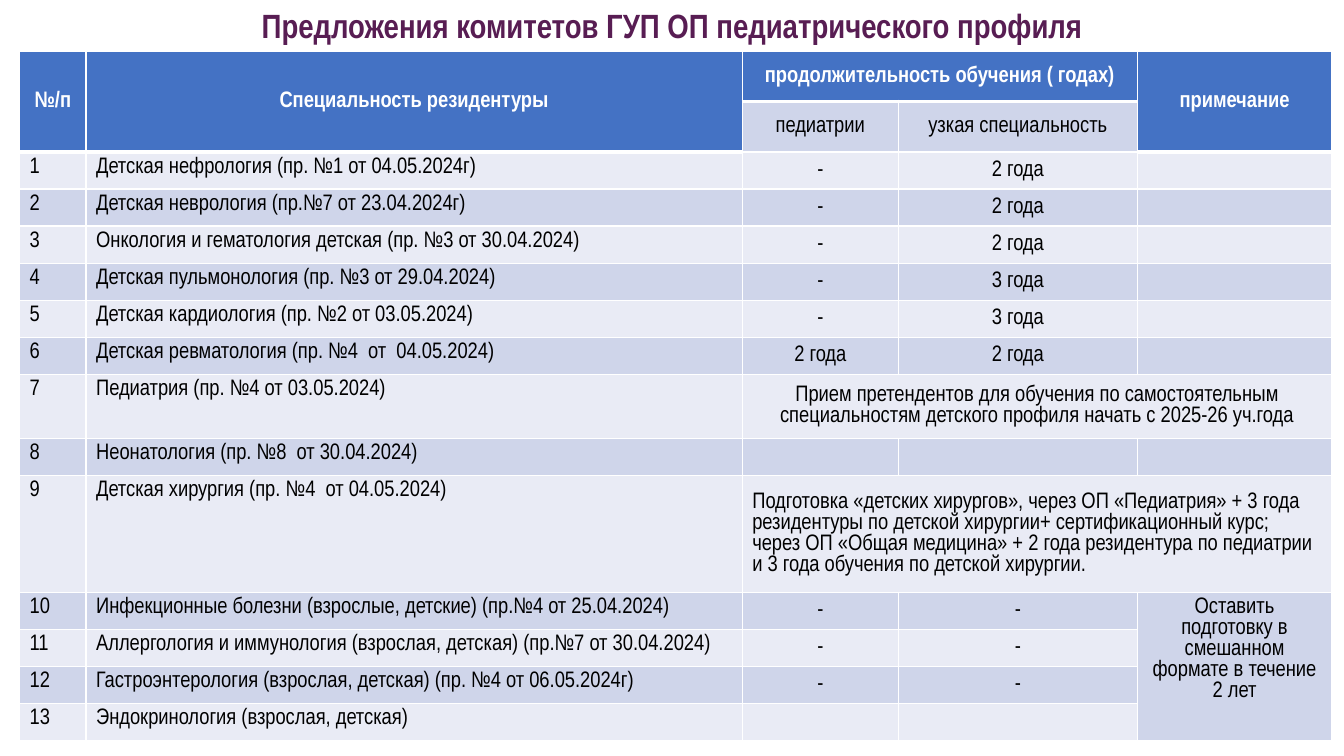
from lxml import etree
from pptx import Presentation
from pptx.dml.color import RGBColor
from pptx.enum import text
from pptx.oxml import ns
from pptx.util import Pt

FONT = "Arial Narrow"
BLUE, BAND_DARK, BAND_LIGHT, WHITE = "4472C4", "CFD5EA", "E9EBF5", "FFFFFF"
COLUMN_WIDTHS = [47.5, 468.7, 111.6, 170.6, 139]
HEADER_HEIGHT, ROW_HEIGHT = 36, 26.5
TALL_ROWS = {8: 45.7, 10: 83.6}
MERGES = [
    (0, 0, 1, 0), (0, 1, 1, 1), (0, 2, 0, 3), (0, 4, 1, 4),
    (8, 2, 8, 4), (10, 2, 10, 4), (11, 4, 14, 4),
]
HEADERS = [
    ["№/п", "Специальность резидентуры", "продолжительность обучения ( годах)", "", "примечание"],
    ["", "", "педиатрии", "узкая специальность", ""],
]
SPECIALTIES = [
    ["Детская нефрология (пр. №1 от 04.05.2024г)", "-", "2 года", ""],
    ["Детская неврология (пр.№7 от 23.04.2024г)", "-", "2 года", ""],
    ["Онкология и гематология детская (пр. №3 от 30.04.2024)", "-", "2 года", ""],
    ["Детская пульмонология (пр. №3 от 29.04.2024)", "-", "3 года", ""],
    ["Детская кардиология (пр. №2 от 03.05.2024)", "-", "3 года", ""],
    ["Детская ревматология (пр. №4  от  04.05.2024)", "2 года", "2 года", ""],
    ["Педиатрия (пр. №4 от 03.05.2024)",
     "Прием претендентов для обучения по самостоятельным специальностям "
     "детского профиля начать с 2025-26 уч.года", "", ""],
    ["Неонатология (пр. №8  от 30.04.2024)", "", "", ""],
    ["Детская хирургия (пр. №4  от 04.05.2024)",
     "Подготовка «детских хирургов», через ОП «Педиатрия» + 3 года резидентуры "
     "по детской хирургии+ сертификационный курс; через ОП «Общая медицина» + "
     "2 года резидентура по педиатрии и 3 года обучения по детской хирургии.", "", ""],
    ["Инфекционные болезни (взрослые, детские) (пр.№4 от 25.04.2024)", "-", "-",
     "Оставить подготовку в смешанном формате в течение 2 лет"],
    ["Аллергология и иммунология (взрослая, детская) (пр.№7 от 30.04.2024)", "-", "-", ""],
    ["Гастроэнтерология (взрослая, детская) (пр. №4 от 06.05.2024г)", "-", "-", ""],
    ["Эндокринология (взрослая, детская)", "", "", ""],
]


def color(value):
    """Turn a hex string into a colour."""
    return RGBColor.from_string(value)


def set_attributes(target, values):
    """Set each named value on the target."""
    for name, value in values.items():
        setattr(target, name, value)


def write(paragraph, content, size, ink, bold, alignment):
    """Fill a paragraph with formatted text."""
    set_attributes(paragraph, {"alignment": alignment, "line_spacing": 1.0})
    set_attributes(paragraph.font, {"size": Pt(size), "name": FONT})
    if content:
        run = paragraph.add_run()
        run.text = content
        set_attributes(run.font, {"size": Pt(size), "name": FONT, "bold": bold})
        run.font.color.rgb = color(ink)


def add_title(slide, left, top, width, height):
    """Place the slide title in its box."""
    title = slide.shapes.title
    set_attributes(title, {"left": Pt(left), "top": Pt(top), "width": Pt(width), "height": Pt(height)})
    set_attributes(title.text_frame, {
        "vertical_anchor": text.MSO_ANCHOR.MIDDLE,
        "auto_size": text.MSO_AUTO_SIZE.NONE,
        "word_wrap": True,
    })
    write(title.text_frame.paragraphs[0], "Предложения комитетов ГУП ОП педиатрического профиля",
          24, "581D53", True, text.PP_ALIGN.CENTER)


def set_borders(cell, widths):
    """Draw white cell borders with the given widths by side."""
    properties = cell._tc.get_or_add_tcPr()
    for index, (side, width) in enumerate(widths.items()):
        line = etree.Element(ns.qn(f"a:ln{side}"), w=str(Pt(width)))
        fill = etree.SubElement(line, ns.qn("a:solidFill"))
        etree.SubElement(fill, ns.qn("a:srgbClr"), val=WHITE)
        properties.insert(index, line)


def format_cell(cell, content, row, column):
    """Style one table cell by its row and column."""
    header = row == 0
    numbered = row > 1 and column < 2
    surgery_note = row == 10 and column == 2
    at_top = numbered or (row > 1 and column == 4)
    fill = BLUE if header else BAND_LIGHT if row % 2 == 0 else BAND_DARK
    cell.fill.solid()
    cell.fill.fore_color.rgb = color(fill)
    cell.vertical_anchor = text.MSO_ANCHOR.TOP if at_top else text.MSO_ANCHOR.MIDDLE
    alignment = text.PP_ALIGN.LEFT if numbered or surgery_note else text.PP_ALIGN.CENTER
    write(cell.text_frame.paragraphs[0], content, 16,
          WHITE if header else "000000", header, alignment)
    if header:
        set_borders(cell, {"L": 1, "R": 1, "T": 1, "B": 3})


def add_specialties_table(slide, left, top):
    """Place the table of residency specialties."""
    numbered = [[str(number), *entry] for number, entry in enumerate(SPECIALTIES, 1)]
    rows = HEADERS + numbered
    heights = [HEADER_HEIGHT if index < len(HEADERS) else TALL_ROWS.get(index, ROW_HEIGHT)
               for index in range(len(rows))]
    table = slide.shapes.add_table(
        len(rows), len(COLUMN_WIDTHS), Pt(left), Pt(top),
        Pt(sum(COLUMN_WIDTHS)), Pt(sum(heights))).table
    for column, width in zip(table.columns, COLUMN_WIDTHS):
        column.width = Pt(width)
    for row, height in zip(table.rows, heights):
        row.height = Pt(height)
    for first_row, first_column, last_row, last_column in MERGES:
        table.cell(first_row, first_column).merge(table.cell(last_row, last_column))
    for row, contents in enumerate(rows):
        for column, content in enumerate(contents):
            format_cell(table.cell(row, column), content, row, column)


def main():
    """Build and save the presentation."""
    presentation = Presentation()
    set_attributes(presentation, {"slide_width": Pt(960), "slide_height": Pt(540)})
    slide = presentation.slides.add_slide(presentation.slide_layouts[5])
    add_title(slide, 0, 0, 960, 36)
    add_specialties_table(slide, 14, 36.5)
    presentation.save("out.pptx")


if __name__ == "__main__":
    main()
